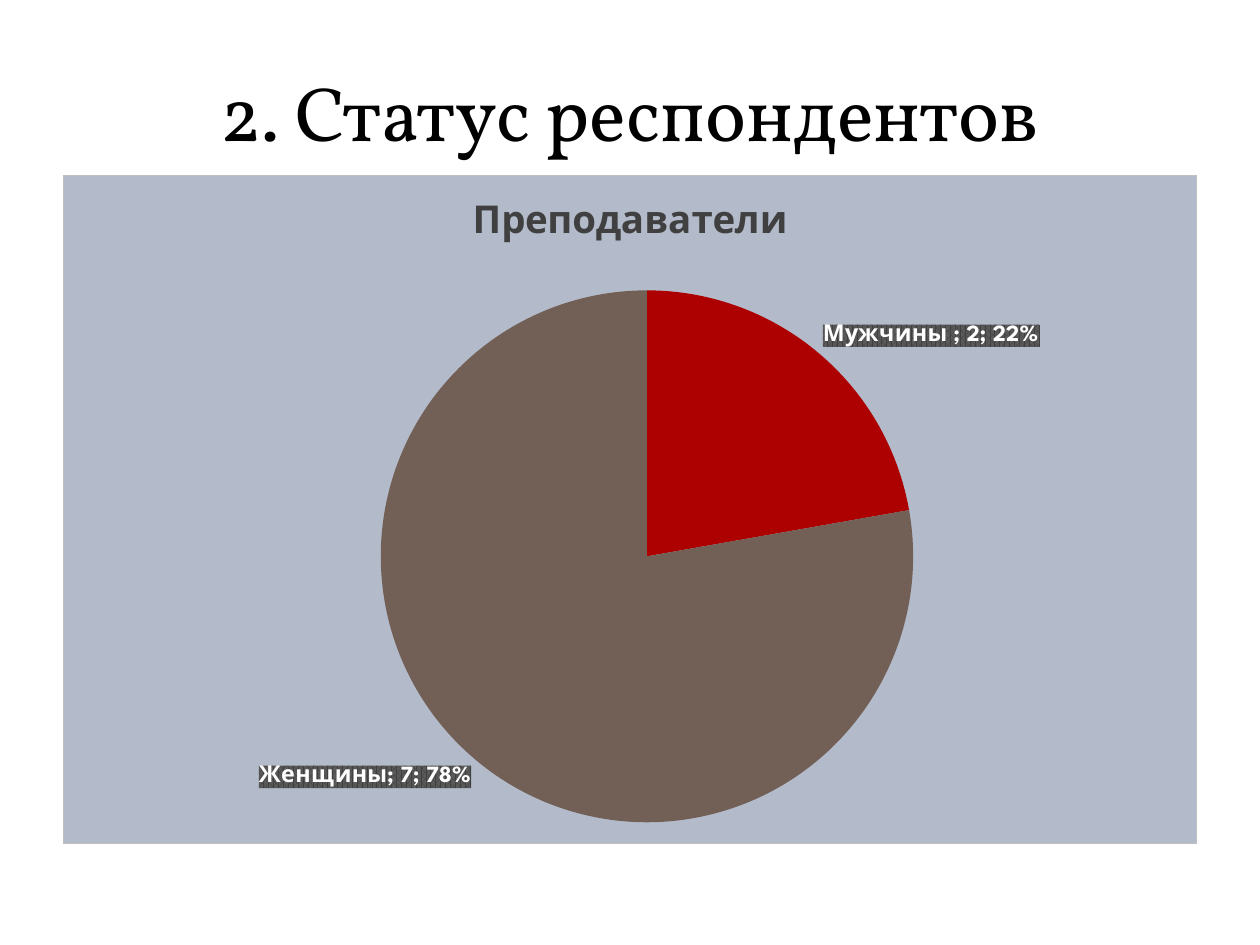
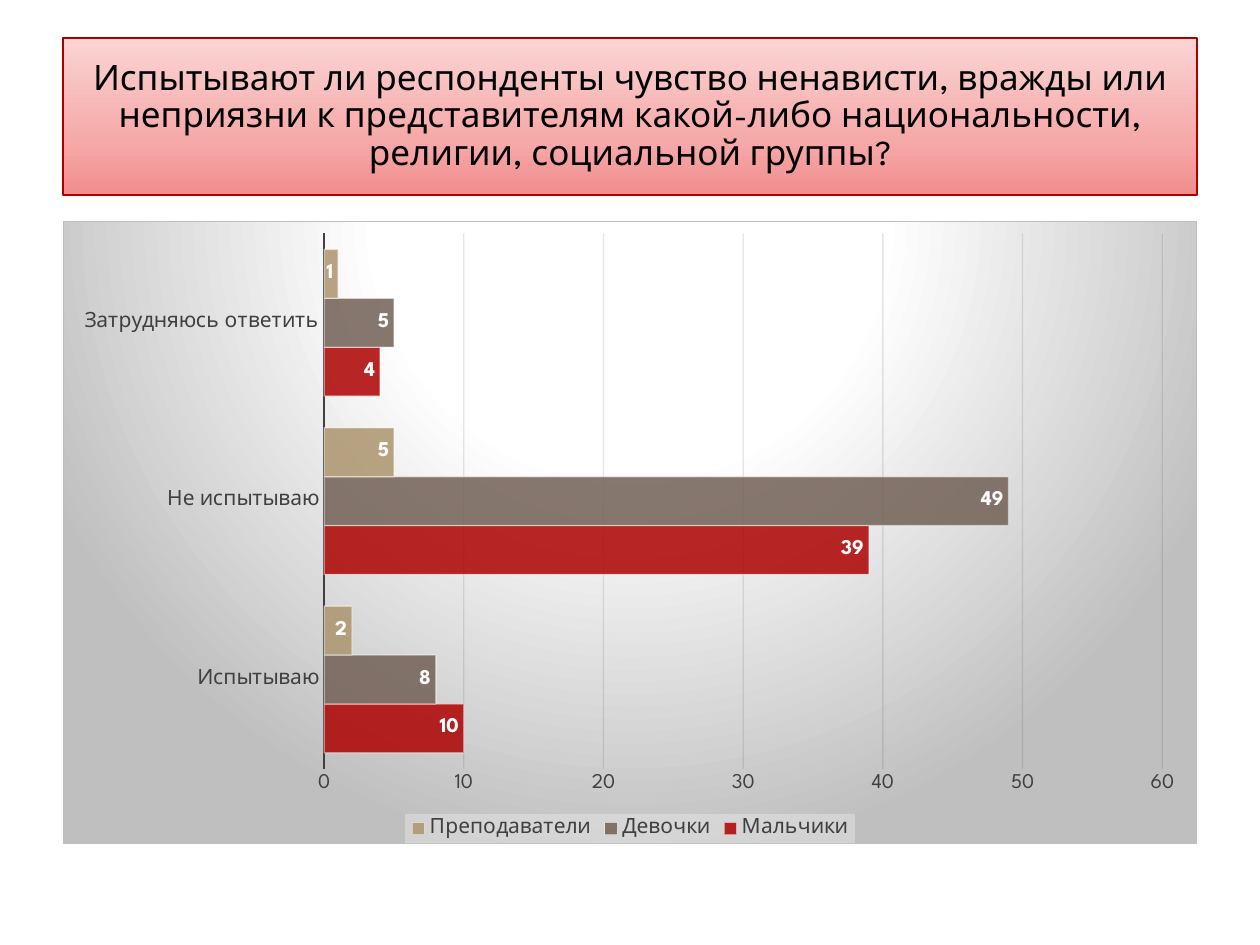
from lxml.etree import SubElement
from pptx import Presentation
from pptx.chart.data import CategoryChartData
from pptx.dml.color import RGBColor
from pptx.enum.chart import (XL_CHART_TYPE, XL_LABEL_POSITION,
                             XL_LEGEND_POSITION, XL_TICK_MARK)
from pptx.enum.shapes import MSO_SHAPE
from pptx.enum.text import MSO_ANCHOR, PP_ALIGN
from pptx.oxml import parse_xml
from pptx.oxml.ns import nsdecls, qn
from pptx.util import Pt

PX = 9144  # 100 px to the inch
RED, BROWN, SAND = "AD0101", "726056", "AC956E"
BLACK, WHITE, DARK, EDGE = "000000", "FFFFFF", "404040", "BFBFBF"
SERIF, SANS = "Vollkorn", "League Spartan"


def rgb(code):
    return RGBColor.from_string(code)


def paint(fill, code, alpha=100):
    fill.solid()
    fill.fore_color.rgb = rgb(code)
    if alpha < 100:
        tint = fill._xPr.find(qn("a:solidFill")).find(qn("a:srgbClr"))
        SubElement(tint, qn("a:alpha"), val=str(alpha * 1000))


def rule(line, code, width, alpha=100):
    paint(line.fill, code, alpha)
    line.width = Pt(width)


def flat(code, alpha=100):
    return (f'<a:solidFill><a:srgbClr val="{code}">'
            f'<a:alpha val="{alpha * 1000}"/></a:srgbClr></a:solidFill>')


def blend(stops, shade):
    marks = "".join(f'<a:gs pos="{at * 1000}"><a:srgbClr val="{code}"/></a:gs>'
                    for at, code in stops)
    return f'<a:gradFill rotWithShape="1"><a:gsLst>{marks}</a:gsLst>{shade}</a:gradFill>'


def props(fill, edge=None):
    """Make the spPr of a chart part from fill XML and an edge colour."""
    line = f'<a:ln w="9525">{flat(edge)}</a:ln>' if edge else ""
    return parse_xml(f'<c:spPr {nsdecls("c", "a")}>{fill}{line}</c:spPr>')


def place(plot, x, y, w, h):
    """Fix the inner plot area, in shares of the chart."""
    area = plot._element.getparent()
    old = area.find(qn("c:layout"))
    if old is not None:
        area.remove(old)
    sizes = "".join(f'<c:{key} val="{val}"/>'
                    for key, val in zip("xywh", (x, y, w, h)))
    area.insert(0, parse_xml(
        f'<c:layout {nsdecls("c")}><c:manualLayout><c:layoutTarget val="inner"/>'
        f'<c:xMode val="edge"/><c:yMode val="edge"/>{sizes}'
        '</c:manualLayout></c:layout>'))


class Deck:
    """Holds the shared style and the current slide."""

    def __init__(self):
        self.file = Presentation()
        self.file.slide_width, self.file.slide_height = 1000 * PX, 750 * PX
        self.slide = None

    def add(self):
        self.slide = self.file.slides.add_slide(self.file.slide_layouts[6])

    def style(self, font, size, code, face=SANS, bold=False):
        font.name, font.size, font.bold = face, Pt(size), bold
        font.color.rgb = rgb(code)

    def title(self, text, size, face, stops=None):
        box = self.slide.shapes.add_shape(
            MSO_SHAPE.RECTANGLE, 50 * PX, 30 * PX, 900 * PX, 125 * PX)
        box.shadow.inherit = False
        if stops:
            box.fill.background()
            none = box._element.spPr.find(qn("a:noFill"))
            grad = props(blend(stops, '<a:lin ang="16200000" scaled="1"/>'))[0]
            none.getparent().replace(none, grad)
            rule(box.line, "AA0000", 1)
        else:
            box.fill.background()
            box.line.fill.background()
        frame = box.text_frame
        frame.text, frame.word_wrap = text, True
        frame.vertical_anchor = MSO_ANCHOR.MIDDLE
        para = frame.paragraphs[0]
        para.alignment, para.line_spacing = PP_ALIGN.CENTER, 0.9
        self.style(para.runs[0].font, size, BLACK, face)

    def chart(self, kind, top, cats, rows, fill):
        data = CategoryChartData()
        data.categories = cats
        for name, vals in rows:
            data.add_series(name, vals)
        chart = self.slide.shapes.add_chart(
            kind, 50 * PX, top * PX, 900 * PX, (670 - top) * PX, data).chart
        self.style(chart.font, 10, BLACK)
        chart._chartSpace.find(qn("c:chart")).addnext(props(fill, EDGE))
        chart.has_title = chart.has_legend = False
        return chart

    def labels(self, labels, size, spot):
        self.style(labels.font, size, WHITE, bold=True)
        labels.show_value = True
        labels.position = spot

    def pie(self, top, name, cats, vals, hues):
        chart = self.chart(XL_CHART_TYPE.PIE, top, cats, [(name, vals)], flat("B3BBCB"))
        chart.has_title = True
        head = chart.chart_title.text_frame
        head.text = name
        self.style(head.paragraphs[0].runs[0].font, 22, DARK, bold=True)
        plot = chart.plots[0]
        plot.vary_by_categories = True
        place(plot, 0.28, 0.17, 0.47, 0.8)
        row = plot.series[0]
        for num, hue in enumerate(hues):
            part = row.points[num].format
            paint(part.fill, hue)
            part.line.fill.background()
        tags = row.data_labels
        self.labels(tags, 13.3, XL_LABEL_POSITION.OUTSIDE_END)
        tags.show_category_name = tags.show_percentage = True
        node = tags._element
        node.find(qn("c:txPr")).addprevious(props(
            '<a:pattFill prst="pct75"><a:fgClr><a:srgbClr val="404040"/></a:fgClr>'
            '<a:bgClr><a:srgbClr val="595959"/></a:bgClr></a:pattFill>'))
        mark = parse_xml(f'<c:separator {nsdecls("c")}>; </c:separator>')
        node.find(qn("c:showPercent")).addnext(mark)
        bubble = node.find(qn("c:showBubbleSize"))
        if bubble is not None:
            bubble.addnext(mark)

    def bars(self, top, cats, rows, hues):
        glow = blend([(0, WHITE), (39, WHITE), (100, EDGE)],
                     '<a:path path="circle"><a:fillToRect l="50000" t="-80000" '
                     'r="50000" b="180000"/></a:path>')
        chart = self.chart(XL_CHART_TYPE.BAR_CLUSTERED, top, cats, rows, glow)
        plot = chart.plots[0]
        plot.gap_width, plot.overlap = 65, 0
        plot.vary_by_categories = False
        place(plot, 0.23, 0.02, 0.74, 0.86)
        for row, hue in zip(plot.series, hues):
            paint(row.format.fill, hue, 85)
            rule(row.format.line, WHITE, 0.75, 50)
            self.labels(row.data_labels, 12, XL_LABEL_POSITION.INSIDE_END)
        for axis in (chart.category_axis, chart.value_axis):
            axis.major_tick_mark = axis.minor_tick_mark = XL_TICK_MARK.NONE
            self.style(axis.tick_labels.font, 12, DARK)
        rule(chart.category_axis.format.line, DARK, 1.5)
        axis = chart.value_axis
        axis.format.line.fill.background()
        axis.minimum_scale, axis.maximum_scale, axis.major_unit = 0, 60, 10
        rule(axis.major_gridlines.format.line, "0D0D0D", 0.75, 10)
        chart.has_legend = True
        legend = chart.legend
        legend.position = XL_LEGEND_POSITION.BOTTOM
        legend.include_in_layout = False
        self.style(legend.font, 12, DARK)
        legend._element.find(qn("c:txPr")).addprevious(props(flat("F2F2F2", 39)))


def main():
    deck = Deck()
    deck.add()
    deck.title("2. Статус респондентов", 44, SERIF)
    deck.pie(139, "Преподаватели", ["Мужчины ", "Женщины"], [2, 7], [RED, BROWN])

    deck.add()
    deck.title("Испытывают ли респонденты чувство ненависти, вражды или неприязни "
               "к представителям какой-либо национальности, религии, социальной группы?",
               20, SANS, [(0, "F18D8D"), (35, "F6A9A9"), (100, "FBD4D4")])
    deck.bars(175, ["Испытываю", "Не испытываю", "Затрудняюсь ответить"],
              [("Мальчики", [10, 39, 4]), ("Девочки", [8, 49, 5]),
               ("Преподаватели", [2, 5, 1])], [RED, BROWN, SAND])
    deck.file.save("out.pptx")


if __name__ == "__main__":
    main()
